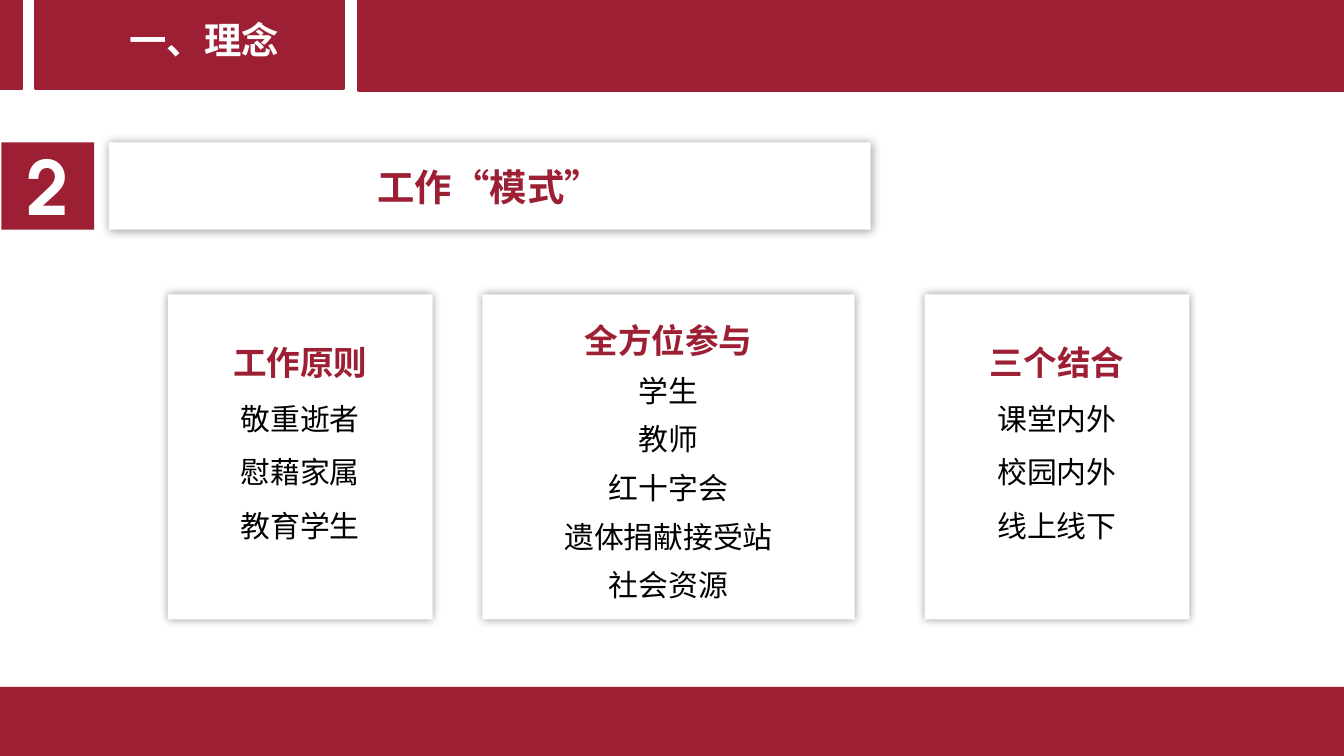
import pptx
import pptx.util
import pptx.dml.color
import pptx.enum.shapes
import pptx.enum.text
import pptx.oxml
import pptx.oxml.ns

Pt = pptx.util.Pt
RED, WHITE, BLACK = "9D1F33", "FFFFFF", "000000"
SANS = "Noto Sans CJK SC"
SHADOW = (
    '<a:effectLst xmlns:a="http://schemas.openxmlformats.org/drawingml/2006/main">'
    '<a:outerShdw blurRad="63500" dist="0" dir="0" algn="ctr" rotWithShape="0">'
    '<a:srgbClr val="000000"><a:alpha val="40000"/></a:srgbClr>'
    '</a:outerShdw></a:effectLst>'
)


def rgb(value):
    return pptx.dml.color.RGBColor.from_string(value)


def write(tf, lines, spacing=None):
    for i, (text, size, color, bold, font) in enumerate(lines):
        p = tf.paragraphs[0] if i == 0 else tf.add_paragraph()
        p.alignment = pptx.enum.text.PP_ALIGN.CENTER
        p.line_spacing = spacing
        r = p.add_run()
        r.text = text
        for name, value in {"size": Pt(size), "bold": bold, "name": font}.items():
            setattr(r.font, name, value)
        r.font.color.rgb = rgb(color)
        ea = pptx.oxml.parse_xml(
            '<a:ea xmlns:a="http://schemas.openxmlformats.org/drawingml/2006/main" '
            f'typeface="{font}"/>'
        )
        r.font._element.find(pptx.oxml.ns.qn("a:latin")).addnext(ea)


prs = pptx.Presentation()
prs.slide_width, prs.slide_height = Pt(720), Pt(405)
s = prs.slides.add_slide(prs.slide_layouts[6])

principles = ["工作原则", "敬重逝者", "慰藉家属", "教育学生"]
participants = ["全方位参与", "学生", "教师", "红十字会", "遗体捐献接受站", "社会资源"]
combinations = ["三个结合", "课堂内外", "校园内外", "线上线下"]

boxes = [
    {"at": (0.7, 76.3, 49.7, 46.8), "fill": RED,
     "lines": [("2", 40, WHITE, True, "TeX Gyre Adventor")]},
    {"at": (58.3, 76.3, 408.2, 46.8), "fill": WHITE,
     "lines": [("工作“模式”", 20, RED, True, SANS)]},
    {"at": (0, 368, 723.6, 39.6), "fill": RED},
]
for left, top, width in [(0, 0, 11.5), (19.4, 0, 164.2), (192.2, 0.7, 527.8)]:
    boxes.append({"at": (left, top, width, 47.5), "fill": RED, "line": RED})
for left, width, items, spacing, bottom in [
    (90, 141.8, principles, 1.5, 29.6),
    (258.5, 199.4, participants, Pt(26), 3.6),
    (495.4, 141.8, combinations, 1.5, 29.6),
]:
    lines = [(items[0], 18, RED, True, SANS)]
    lines += [(item, 16, BLACK, False, SANS) for item in items[1:]]
    boxes.append({"at": (left, 157.7, width, 174.2), "fill": WHITE,
                  "lines": lines, "spacing": spacing, "bottom": bottom})

for box in boxes:
    sp = s.shapes.add_shape(pptx.enum.shapes.MSO_SHAPE.RECTANGLE, *map(Pt, box["at"]))
    sp.shadow.inherit = False
    sp.fill.solid()
    sp.fill.fore_color.rgb = rgb(box["fill"])
    if "line" in box:
        sp.line.color.rgb = rgb(box["line"])
        sp.line.width = Pt(2)
    else:
        sp.line.fill.background()
    if box["fill"] == WHITE:
        effects = sp._element.spPr.find(pptx.oxml.ns.qn("a:effectLst"))
        effects.getparent().replace(effects, pptx.oxml.parse_xml(SHADOW))
    tf = sp.text_frame
    for name, value in {
        "word_wrap": True,
        "vertical_anchor": pptx.enum.text.MSO_ANCHOR.MIDDLE,
        "margin_bottom": Pt(box.get("bottom", 3.6)),
    }.items():
        setattr(tf, name, value)
    write(tf, box.get("lines", []), box.get("spacing"))

tf = s.shapes.add_textbox(Pt(61.9), Pt(5.8), Pt(95), Pt(31.7)).text_frame
tf.word_wrap = False
tf.auto_size = pptx.enum.text.MSO_AUTO_SIZE.SHAPE_TO_FIT_TEXT
write(tf, [("一、理念", 20, WHITE, True, SANS)])

prs.save("out.pptx")
